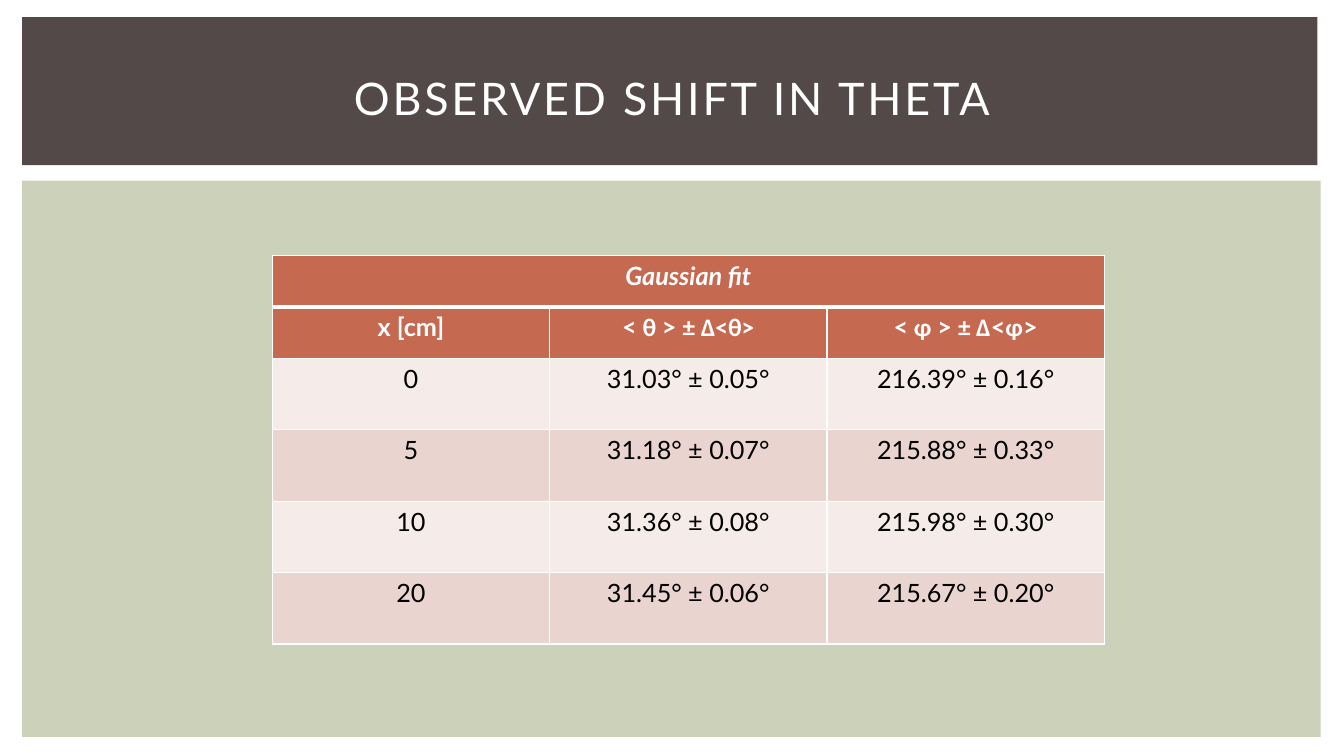
from lxml import etree
from pptx import Presentation
from pptx.dml.color import RGBColor
from pptx.enum.shapes import MSO_SHAPE
from pptx.enum.text import MSO_ANCHOR, PP_ALIGN
from pptx.oxml.ns import qn
from pptx.util import Cm, Pt

RECTANGLE = MSO_SHAPE.RECTANGLE
MIDDLE = MSO_ANCHOR.MIDDLE
CENTER = PP_ALIGN.CENTER

WHITE = RGBColor(0xFF, 0xFF, 0xFF)
BLACK = RGBColor(0, 0, 0)
SAGE = RGBColor(0xCC, 0xD1, 0xB9)
UMBER = RGBColor(0x53, 0x49, 0x49)
RUST = RGBColor(0xC6, 0x69, 0x51)
BANDS = [RGBColor(0xF5, 0xEB, 0xE9), RGBColor(0xEA, 0xD4, 0xD0)]

LATO, CALIBRI = "Lato", "Calibri"

# Content: each cell is a list of (text, font) spans
TITLE = "OBSERVED SHIFT IN THETA"
CAPTION = [("Gaussian fit", LATO)]
HEADINGS = [
    [("x [cm]", LATO)],
    [("<", LATO), (" θ ", CALIBRI), ("> ", LATO), ("± Δ<θ>", CALIBRI)],
    [("<", LATO), (" φ ", CALIBRI), ("> ", LATO), ("± Δ", CALIBRI),
     ("<", LATO), ("φ", CALIBRI), (">", LATO)],
]
READINGS = [
    ("0", "31.03° ± 0.05°", "216.39° ± 0.16°"),
    ("5", "31.18° ± 0.07°", "215.88° ± 0.33°"),
    ("10", "31.36° ± 0.08°", "215.98° ± 0.30°"),
    ("20", "31.45° ± 0.06°", "215.67° ± 0.20°"),
]

# Layout in centimetres: left, top, width, height
PANELS = [(SAGE, (0.56, 4.55, 32.72, 14.02)), (UMBER, (0.56, 0.43, 32.64, 3.73))]
TITLE_BOX = (1.42, 0.99, 31.04, 2.92)
TABLE_LEFT, TABLE_TOP = 6.86, 6.43
COLUMN_WIDTH, HEADER_HEIGHT, READING_HEIGHT = 6.99, 1.3, 1.8

CAPTION_FORMAT = {"size": Pt(18), "bold": True, "italic": True}
HEADING_FORMAT = {"size": Pt(18), "bold": True, "italic": False}
READING_FORMAT = {"size": Pt(18), "bold": False, "italic": False}


def write_spans(para, spans, formats, color):
    para.alignment = CENTER
    for text, font_name in spans:
        span = para.add_run()
        span.text = text
        span.font.name = font_name
        span.font.color.rgb = color
        for name, value in formats.items():
            setattr(span.font, name, value)


def add_borders(cell, widths):
    properties = cell._tc.get_or_add_tcPr()
    for side, width in widths.items():
        line = etree.SubElement(properties, qn(f"a:ln{side}"), w=str(Pt(width)))
        fill = etree.SubElement(line, qn("a:solidFill"))
        etree.SubElement(fill, qn("a:srgbClr"), val=str(WHITE))


def fill_cell(cell, spans, formats, color, background, widths):
    add_borders(cell, widths)
    cell.fill.solid()
    cell.fill.fore_color.rgb = background
    write_spans(cell.text_frame.paragraphs[0], spans, formats, color)


def main():
    deck = Presentation()
    deck.slide_width, deck.slide_height = Cm(33.87), Cm(19.05)
    page = deck.slides.add_slide(deck.slide_layouts[5])

    # Background panels
    for color, place in PANELS:
        panel = page.shapes.add_shape(RECTANGLE, *map(Cm, place))
        panel.shadow.inherit = False
        panel.fill.solid()
        panel.fill.fore_color.rgb = color
        panel.line.fill.background()

    # Title, brought in front of its panel
    title = page.shapes.title
    title.left, title.top, title.width, title.height = map(Cm, TITLE_BOX)
    title.text_frame.vertical_anchor = MIDDLE
    title_para = title.text_frame.paragraphs[0]
    write_spans(title_para, [(TITLE, LATO)], {"size": Pt(32)}, WHITE)
    title_para.runs[0].font._element.set("spc", "200")
    page.shapes._spTree.append(title._element)

    # Table grid
    heights = [HEADER_HEIGHT] * 2 + [READING_HEIGHT] * len(READINGS)
    columns = len(HEADINGS)
    table = page.shapes.add_table(
        len(heights), columns, Cm(TABLE_LEFT), Cm(TABLE_TOP),
        Cm(COLUMN_WIDTH * columns), Cm(sum(heights))).table
    for column in table.columns:
        column.width = Cm(COLUMN_WIDTH)
    for row, height in zip(table.rows, heights):
        row.height = Cm(height)
    table.cell(0, 0).merge(table.cell(0, columns - 1))

    # Table rows: spans, format, text colour, background
    rows = [([CAPTION, [], []], CAPTION_FORMAT, WHITE, RUST),
            (HEADINGS, HEADING_FORMAT, WHITE, RUST)]
    for index, reading in enumerate(READINGS):
        cells = [[(text, LATO)] for text in reading]
        rows.append((cells, READING_FORMAT, BLACK, BANDS[index % 2]))
    for row_index, (cells, formats, color, background) in enumerate(rows):
        widths = {"L": 1, "R": 1, "T": 3 if row_index == 1 else 1,
                  "B": 3 if row_index == 0 else 1}
        for column_index, spans in enumerate(cells):
            fill_cell(table.cell(row_index, column_index), spans, formats,
                      color, background, widths)

    deck.save("out.pptx")


if __name__ == "__main__":
    main()
